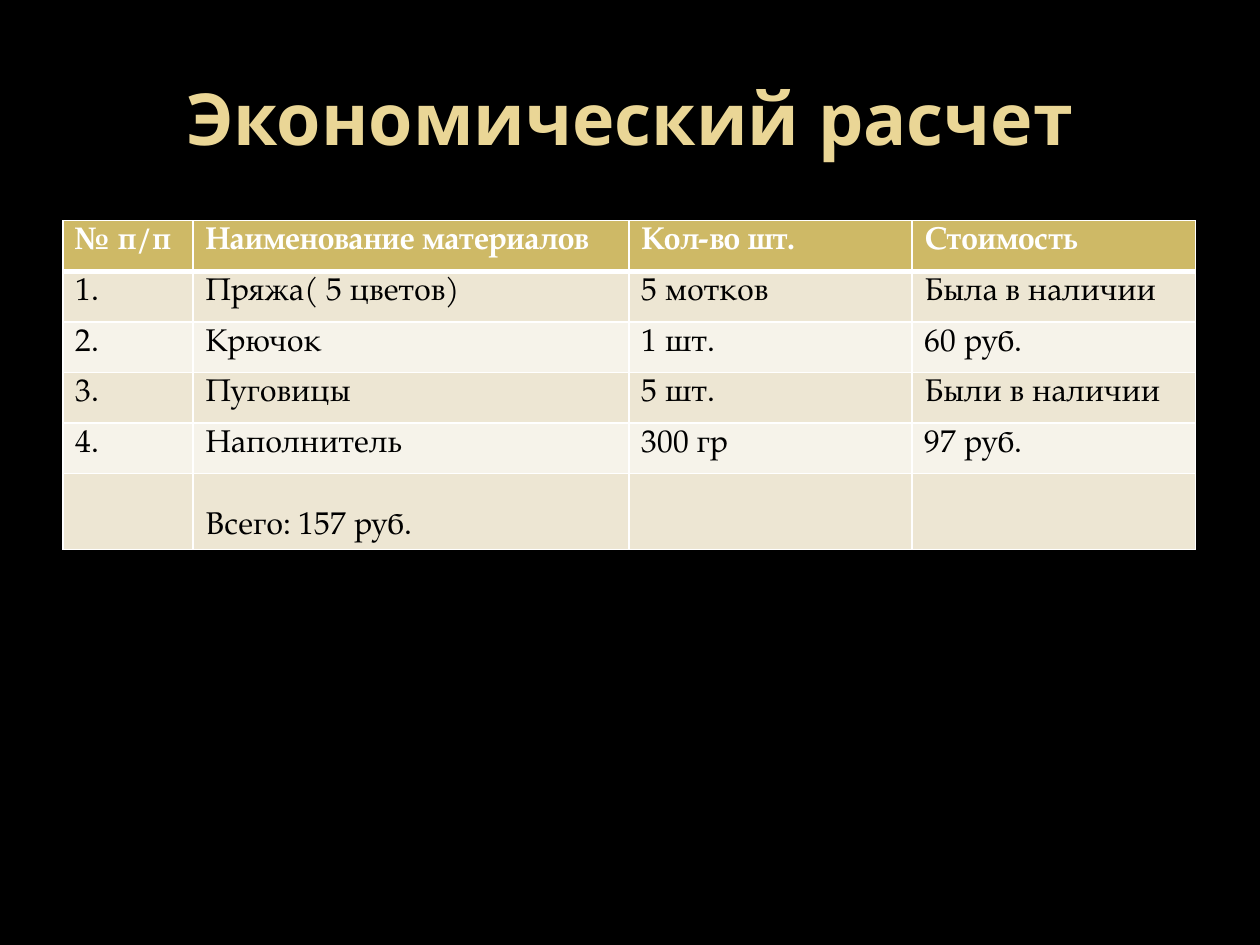
from dataclasses import dataclass

from lxml.etree import SubElement
from pptx import Presentation
from pptx.dml.color import RGBColor
from pptx.enum.text import MSO_ANCHOR, PP_ALIGN
from pptx.oxml.ns import qn
from pptx.slide import Slide
from pptx.table import _Cell
from pptx.text.text import TextFrame
from pptx.util import Cm, Pt

TITLE_FONT = "Noto Sans"
TABLE_FONT = "TeX Gyre Pagella"
BLACK, WHITE = "000000", "FFFFFF"
COLUMN_WIDTHS = (2.62, 8.79, 5.71, 5.71)
ROW_HEIGHT, TOTAL_HEIGHT = 1.02, 1.53


@dataclass(frozen=True)
class RowStyle:
    fill: str
    text: str = BLACK
    bold: bool = False
    top: float = 1
    bottom: float = 1


@dataclass(frozen=True)
class Material:
    number: str
    title: str
    quantity: str
    cost: str

    def values(self) -> tuple[str, ...]:
        return self.number, self.title, self.quantity, self.cost


HEADER = Material("№ п/п", "Наименование материалов", "Кол-во шт.", "Стоимость")
MATERIALS = (
    Material("1.", "Пряжа( 5 цветов)", "5 мотков", "Была в наличии"),
    Material("2.", "Крючок", "1 шт.", "60 руб."),
    Material("3.", "Пуговицы", "5 шт.", "Были в наличии"),
    Material("4.", "Наполнитель", "300 гр", "97 руб."),
)
TOTAL = Material("", "Всего: 157 руб.", "", "")


def color(value: str) -> RGBColor:
    return RGBColor.from_string(value)


def add_text(frame: TextFrame, text: str, font: str, size: float,
             text_color: str, bold: bool) -> None:
    run = frame.paragraphs[0].add_run()
    run.text = text
    run.font.name = font
    run.font.size = Pt(size)
    run.font.bold = bold
    run.font.color.rgb = color(text_color)


def add_borders(cell: _Cell, style: RowStyle) -> None:
    properties = cell._tc.get_or_add_tcPr()
    widths = {"L": 1, "R": 1, "T": style.top, "B": style.bottom}
    for side, width in widths.items():
        line = SubElement(properties, qn(f"a:ln{side}"), w=str(Pt(width)))
        fill = SubElement(line, qn("a:solidFill"))
        SubElement(fill, qn("a:srgbClr"), val=WHITE)


def fill_cell(cell: _Cell, text: str, style: RowStyle) -> None:
    add_borders(cell, style)
    cell.fill.solid()
    cell.fill.fore_color.rgb = color(style.fill)
    if text:
        add_text(cell.text_frame, text, TABLE_FONT, 18, style.text, style.bold)


def row_style(index: int) -> RowStyle:
    if index == 0:
        return RowStyle("CEB966", WHITE, bold=True, bottom=3)
    return RowStyle("EDE6D3" if index % 2 else "F6F3EA", top=3 if index == 1 else 1)


def add_title(slide: Slide, text: str) -> None:
    title = slide.shapes.title
    title.left, title.top = Cm(1.27), Cm(0.76)
    title.width, title.height = Cm(22.86), Cm(3.18)
    title.text_frame.vertical_anchor = MSO_ANCHOR.MIDDLE
    title.text_frame.paragraphs[0].alignment = PP_ALIGN.CENTER
    add_text(title.text_frame, text, TITLE_FONT, 41, "EAD696", True)


def add_cost_table(slide: Slide) -> None:
    rows = (HEADER, *MATERIALS, TOTAL)
    heights = [ROW_HEIGHT] * (len(rows) - 1) + [TOTAL_HEIGHT]
    table = slide.shapes.add_table(
        len(rows), len(COLUMN_WIDTHS), Cm(1.27), Cm(4.45),
        Cm(sum(COLUMN_WIDTHS)), Cm(sum(heights)),
    ).table
    for column, width in zip(table.columns, COLUMN_WIDTHS):
        column.width = Cm(width)
    for index, (material, height) in enumerate(zip(rows, heights)):
        table.rows[index].height = Cm(height)
        for cell, text in zip(table.rows[index].cells, material.values()):
            fill_cell(cell, text, row_style(index))
            if material is TOTAL:
                cell.vertical_anchor = MSO_ANCHOR.BOTTOM


def main() -> None:
    presentation = Presentation()
    presentation.slide_width, presentation.slide_height = Cm(25.4), Cm(19.05)
    slide = presentation.slides.add_slide(presentation.slide_layouts[5])
    slide.background.fill.solid()
    slide.background.fill.fore_color.rgb = color(BLACK)
    add_title(slide, "Экономический расчет")
    add_cost_table(slide)
    presentation.save("out.pptx")


if __name__ == "__main__":
    main()
